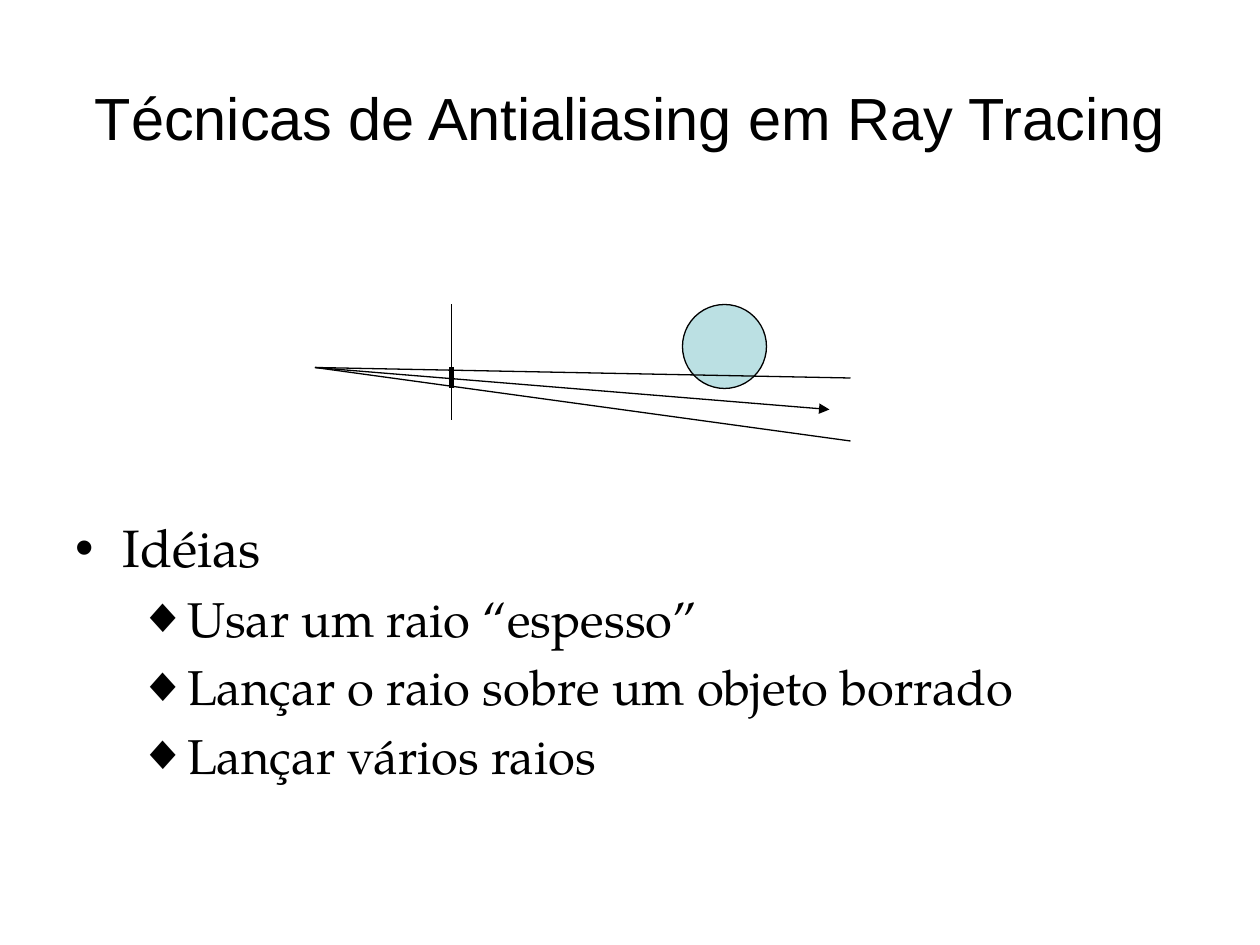
"""Build a slide on antialiasing techniques in ray tracing."""
import pptx
import pptx.dml.color
import pptx.enum.shapes
import pptx.enum.text
import pptx.oxml.ns
import pptx.util
from lxml import etree

Pt = pptx.util.Pt


def color(value):
    return pptx.dml.color.RGBColor.from_string(value)


def add_element(parent, tag, **attributes):
    return etree.SubElement(parent, pptx.oxml.ns.qn(tag), **attributes)


class SlideBuilder:
    ink = "000000"
    ball_fill = "BBE0E3"
    title_font = "Arial"
    bullet_font = "Arial"
    body_font = "TeX Gyre Pagella"
    line_width = 0.75

    def __init__(self, slide):
        self.slide = slide

    def text_box(self, left, top, width, height, anchor):
        frame = self.slide.shapes.add_textbox(Pt(left), Pt(top), Pt(width), Pt(height)).text_frame
        frame.word_wrap = True
        frame.vertical_anchor = anchor
        return frame

    def run(self, paragraph, text, font, size):
        run = paragraph.add_run()
        run.text = text
        run.font.name = font
        run.font.size = Pt(size)
        run.font.color.rgb = color(self.ink)

    def title(self, text):
        frame = self.text_box(36, 21.6, 648, 90, pptx.enum.text.MSO_ANCHOR.MIDDLE)
        paragraph = frame.paragraphs[0]
        paragraph.alignment = pptx.enum.text.PP_ALIGN.CENTER
        self.run(paragraph, text, self.title_font, 34)

    def bullet(self, paragraph, text, level):
        margin, hanging, mark, size = ((27, 27, "•", 30), (58.5, 22.5, "◆", 28))[level]
        paragraph.level = level
        properties = paragraph._p.get_or_add_pPr()
        properties.set("marL", str(Pt(margin)))
        properties.set("indent", str(-Pt(hanging)))
        add_element(properties, "a:buFont", typeface=self.bullet_font)
        add_element(properties, "a:buChar", char=mark)
        self.run(paragraph, text, self.body_font, size)

    def ideas(self, heading, items):
        frame = self.text_box(36, 291, 648, 191.5, pptx.enum.text.MSO_ANCHOR.TOP)
        self.bullet(frame.paragraphs[0], heading, 0)
        for item in items:
            paragraph = frame.add_paragraph()
            self.bullet(paragraph, item, 1)
            paragraph.space_before = Pt(5.6)

    def circle(self, left, top, diameter):
        shape = self.slide.shapes.add_shape(
            pptx.enum.shapes.MSO_SHAPE.OVAL, Pt(left), Pt(top), Pt(diameter), Pt(diameter))
        shape.shadow.inherit = False
        shape.fill.solid()
        shape.fill.fore_color.rgb = color(self.ball_fill)
        shape.line.color.rgb = color(self.ink)
        shape.line.width = Pt(self.line_width)

    def line(self, start, end, width=line_width, arrow=False):
        connector = self.slide.shapes.add_connector(
            pptx.enum.shapes.MSO_CONNECTOR.STRAIGHT, *map(Pt, start + end))
        connector.line.color.rgb = color(self.ink)
        connector.line.width = Pt(width)
        if arrow:
            add_element(connector.line._get_or_add_ln(), "a:tailEnd", type="triangle")
        add_element(connector._element.spPr, "a:effectLst")


def main():
    presentation = pptx.Presentation()
    presentation.slide_width, presentation.slide_height = Pt(720), Pt(540)
    builder = SlideBuilder(presentation.slides.add_slide(presentation.slide_layouts[6]))

    builder.title("Técnicas de Antialiasing em Ray Tracing")
    builder.ideas("Idéias", (
        "Usar um raio “espesso”",
        "Lançar o raio sobre um objeto borrado",
        "Lançar vários raios",
    ))

    builder.circle(390, 174, 48)
    eye = (180, 210)
    builder.line(eye, (474, 234), arrow=True)
    for cone_edge in ((486, 216), (486, 252)):
        builder.line(eye, cone_edge)
    screen_x = 258
    builder.line((screen_x, 174), (screen_x, 240))
    builder.line((screen_x, 210), (screen_x, 222), width=3)

    presentation.save("out.pptx")


if __name__ == "__main__":
    main()
